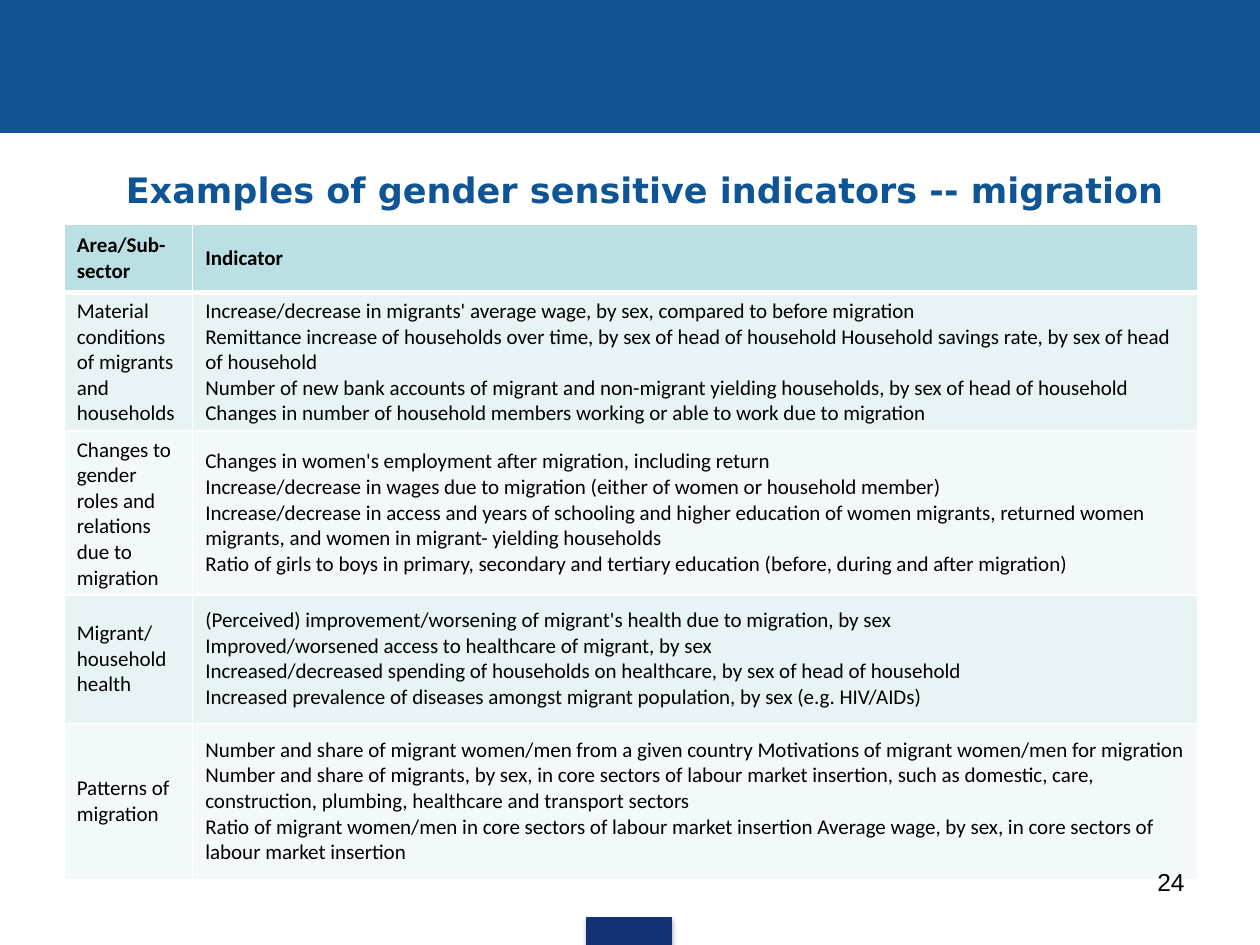
from lxml.etree import SubElement
from pptx import Presentation
from pptx.dml.color import RGBColor
from pptx.enum.shapes import MSO_SHAPE
from pptx.enum.text import MSO_ANCHOR, PP_ALIGN
from pptx.oxml.ns import qn
from pptx.util import Inches, Pt

BLUE = RGBColor(0x0F, 0x54, 0x94)
NAVY = RGBColor(0x13, 0x31, 0x76)
BLACK = RGBColor(0, 0, 0)
WHITE = RGBColor(0xFF, 0xFF, 0xFF)
HEADER = RGBColor(0xBB, 0xE0, 0xE3)
BANDS = (RGBColor(0xE7, 0xF3, 0xF4), RGBColor(0xF3, 0xF9, 0xFA))

TITLE_FORMAT = {"name": "DejaVu Sans", "size": Pt(20), "bold": True}
HEADER_FORMAT = {"name": "Calibri", "size": Pt(12), "bold": True}
BODY_FORMAT = {"name": "Calibri", "size": Pt(12), "bold": False}
NUMBER_FORMAT = {"name": "Arial", "size": Pt(14)}

COLUMN_WIDTHS = (1.02, 7.98)
ROW_HEIGHTS = (0.54, 1.02, 1.24, 1.02, 1.24)
INDICATORS = [
    ("Area/Sub-sector", ["Indicator"]),
    ("Material conditions of migrants and households", [
        "Increase/decrease in migrants' average wage, by sex, compared to before migration",
        "Remittance increase of households over time, by sex of head of household "
        "Household savings rate, by sex of head of household",
        "Number of new bank accounts of migrant and non-migrant yielding households, "
        "by sex of head of household",
        "Changes in number of household members working or able to work due to migration",
    ]),
    ("Changes to gender roles and relations due to migration", [
        "Changes in women's employment after migration, including return",
        "Increase/decrease in wages due to migration (either of women or household member)",
        "Increase/decrease in access and years of schooling and higher education of women "
        "migrants, returned women migrants, and women in migrant- yielding households",
        "Ratio of girls to boys in primary, secondary and tertiary education "
        "(before, during and after migration)",
    ]),
    ("Migrant/household health", [
        "(Perceived) improvement/worsening of migrant's health due to migration, by sex",
        "Improved/worsened access to healthcare of migrant, by sex",
        "Increased/decreased spending of households on healthcare, by sex of head of household",
        "Increased prevalence of diseases amongst migrant population, by sex (e.g. HIV/AIDs)",
    ]),
    ("Patterns of migration", [
        "Number and share of migrant women/men from a given country "
        "Motivations of migrant women/men for migration",
        "Number and share of migrants, by sex, in core sectors of labour market insertion, "
        "such as domestic, care, construction, plumbing, healthcare and transport sectors",
        "Ratio of migrant women/men in core sectors of labour market insertion "
        "Average wage, by sex, in core sectors of labour market insertion",
    ]),
]


class SlideBuilder:
    """Draws styled elements on the current slide."""

    def __init__(self, slide):
        self.slide = slide

    def fill_text(self, text_frame, lines, font_format, color, alignment=PP_ALIGN.LEFT):
        text_frame.text = "\n".join(lines)
        for paragraph in text_frame.paragraphs:
            paragraph.alignment = alignment
            for name, value in font_format.items():
                setattr(paragraph.font, name, value)
            paragraph.font.color.rgb = color

    def rectangle(self, left, top, width, height, color):
        shape = self.slide.shapes.add_shape(
            MSO_SHAPE.RECTANGLE, Inches(left), Inches(top), Inches(width), Inches(height))
        shape.shadow.inherit = False
        shape.fill.solid()
        shape.fill.fore_color.rgb = color
        shape.line.color.rgb = color
        shape.line.width = Pt(0.75)
        return shape

    def shadow(self, shape):
        effects = shape._element.spPr.find(qn("a:effectLst"))
        outer = SubElement(effects, qn("a:outerShdw"), blurRad=str(Pt(3.1)),
                           dist=str(Pt(1.8)), dir="5400000", rotWithShape="0")
        color = SubElement(outer, qn("a:srgbClr"), val=str(BLACK))
        SubElement(color, qn("a:alpha"), val="35000")

    def text(self, left, top, width, height, text, font_format, color,
             anchor=MSO_ANCHOR.TOP, alignment=PP_ALIGN.LEFT, indent=0):
        box = self.slide.shapes.add_textbox(
            Inches(left), Inches(top), Inches(width), Inches(height))
        box.text_frame.word_wrap = True
        box.text_frame.vertical_anchor = anchor
        self.fill_text(box.text_frame, [text], font_format, color, alignment)
        if indent:
            properties = box.text_frame.paragraphs[0]._p.get_or_add_pPr()
            properties.set("marL", str(Inches(indent)))

    def borders(self, cell, bottom_width):
        properties = cell._tc.get_or_add_tcPr()
        for side, width in {"L": 1, "R": 1, "T": 1, "B": bottom_width}.items():
            line = SubElement(properties, qn(f"a:ln{side}"), w=str(Pt(width)))
            fill = SubElement(line, qn("a:solidFill"))
            SubElement(fill, qn("a:srgbClr"), val=str(WHITE))

    def cell(self, cell, lines, is_header, color):
        self.fill_text(cell.text_frame, lines, HEADER_FORMAT if is_header else BODY_FORMAT, BLACK)
        cell.vertical_anchor = MSO_ANCHOR.MIDDLE
        self.borders(cell, 3 if is_header else 1)
        cell.fill.solid()
        cell.fill.fore_color.rgb = color

    def table(self, left, top, rows):
        table = self.slide.shapes.add_table(
            len(rows), len(COLUMN_WIDTHS), Inches(left), Inches(top),
            Inches(sum(COLUMN_WIDTHS)), Inches(sum(ROW_HEIGHTS))).table
        for column, width in zip(table.columns, COLUMN_WIDTHS):
            column.width = Inches(width)
        for index, (area, indicators) in enumerate(rows):
            table.rows[index].height = Inches(ROW_HEIGHTS[index])
            color = BANDS[(index - 1) % 2] if index else HEADER
            for column, lines in enumerate(([area], indicators)):
                self.cell(table.cell(index, column), lines, index == 0, color)


def main():
    presentation = Presentation()
    presentation.slide_width = Inches(10)
    presentation.slide_height = Inches(7.5)
    builder = SlideBuilder(presentation.slides.add_slide(presentation.slide_layouts[6]))
    builder.shadow(builder.rectangle(4.66, 7.28, 0.67, 0.22, NAVY))
    builder.rectangle(0, 0, 10, 1.05, BLUE)
    builder.text(0.51, 1.23, 9, 0.55, "Examples of gender sensitive indicators -- migration",
                 TITLE_FORMAT, BLUE, anchor=MSO_ANCHOR.MIDDLE, indent=0.39)
    builder.table(0.51, 1.78, INDICATORS)
    builder.text(7.17, 6.83, 2.33, 0.52, "24", NUMBER_FORMAT, BLACK, alignment=PP_ALIGN.RIGHT)
    presentation.save("out.pptx")


if __name__ == "__main__":
    main()
